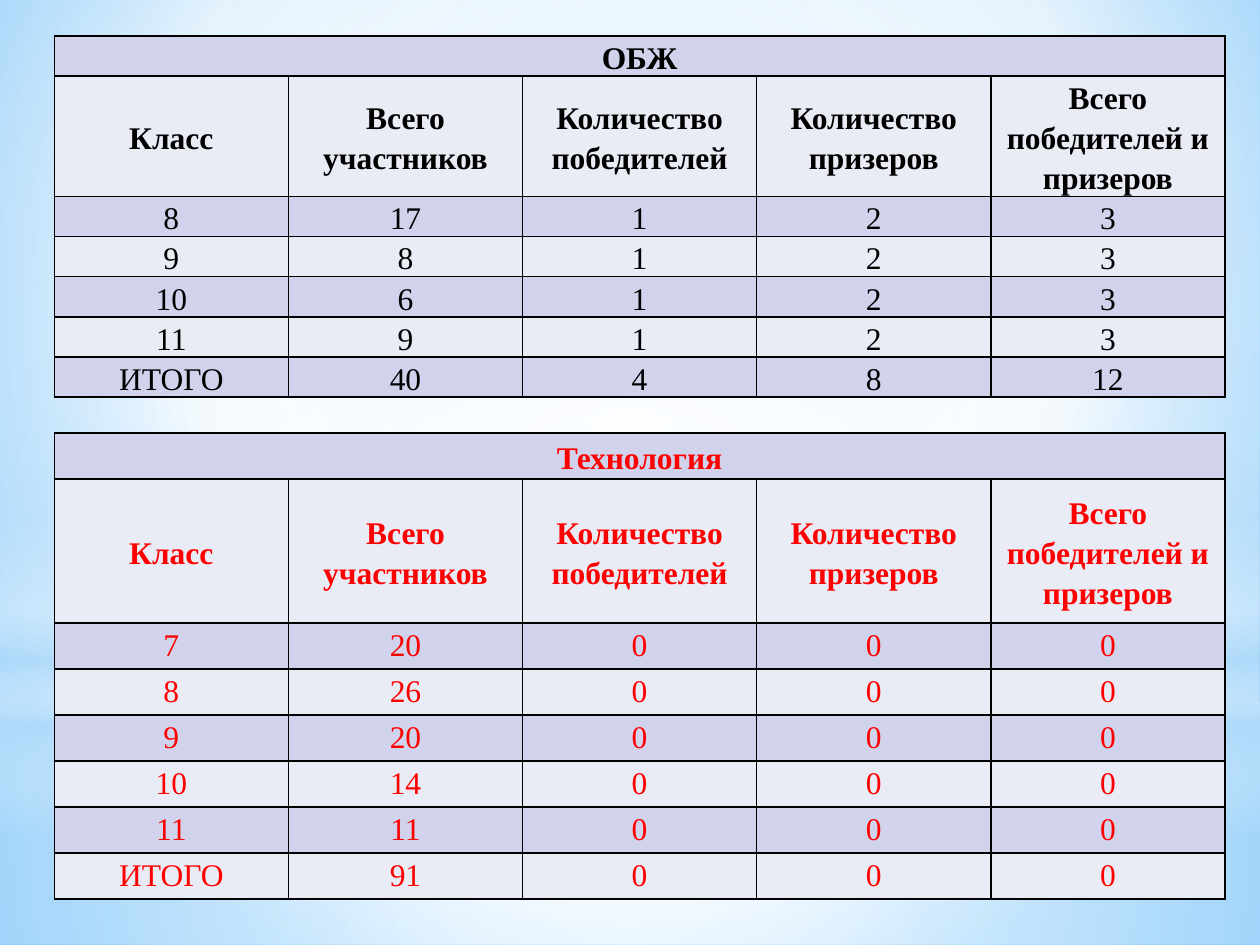
from lxml import etree
from pptx import Presentation
from pptx.dml.color import RGBColor
from pptx.enum import shapes, text
from pptx.oxml import ns
from pptx.util import Pt

BLACK = RGBColor(0x00, 0x00, 0x00)
RED = RGBColor(0xFF, 0x00, 0x00)
WHITE = RGBColor(0xFF, 0xFF, 0xFF)
HAZE = RGBColor(0xB4, 0xDC, 0xFA)
SKY = RGBColor(0x9E, 0xD5, 0xFF)
DEEP_SKY = RGBColor(0x5B, 0xB9, 0xFF)
BANDS = [RGBColor(0xD0, 0xD3, 0xEB), RGBColor(0xE9, 0xEB, 0xF5)]
CENTRE = (50, 50, 50, 50)


def add_gradient(holder, stops, focus):
    solid = holder.find(ns.qn("a:solidFill"))
    gradient = etree.Element(ns.qn("a:gradFill"), rotWithShape="1")
    stop_list = etree.SubElement(gradient, ns.qn("a:gsLst"))
    for position, color, opacity in stops:
        stop = etree.SubElement(stop_list, ns.qn("a:gs"), pos=str(position * 1000))
        tint = etree.SubElement(stop, ns.qn("a:srgbClr"), val=str(color))
        if opacity < 100:
            etree.SubElement(tint, ns.qn("a:alpha"), val=str(opacity * 1000))
    if focus:
        radial = etree.SubElement(gradient, ns.qn("a:path"), path="circle")
        edges = {side: str(share * 1000) for side, share in zip("ltrb", focus)}
        etree.SubElement(radial, ns.qn("a:fillToRect"), **edges)
    else:
        etree.SubElement(gradient, ns.qn("a:lin"), ang="5400000", scaled="0")
    holder.replace(solid, gradient)


def add_borders(cell):
    properties = cell._tc.get_or_add_tcPr()
    for index, side in enumerate(("lnL", "lnR", "lnT", "lnB")):
        border = etree.Element(ns.qn(f"a:{side}"), w=str(Pt(1)))
        paint = etree.SubElement(border, ns.qn("a:solidFill"))
        etree.SubElement(paint, ns.qn("a:srgbClr"), val=str(BLACK))
        properties.insert(index, border)


prs = Presentation()
prs.slide_width, prs.slide_height = Pt(720), Pt(540)
slide = prs.slides.add_slide(prs.slide_layouts[6])

slide.background.fill.solid()
add_gradient(slide.element.find(".//" + ns.qn("p:bgPr")),
             [(0, SKY, 100), (60, WHITE, 100), (100, DEEP_SKY, 100)], (20, 10, 20, 60))

RECTANGLE, OVAL = shapes.MSO_SHAPE.RECTANGLE, shapes.MSO_SHAPE.OVAL
glows = [
    (RECTANGLE, 401.8, 138.2, [(0, WHITE, 91), (37, WHITE, 76), (100, HAZE, 79)], CENTRE),
    (RECTANGLE, 0, 401.8, [(0, WHITE, 89), (48, WHITE, 62), (100, HAZE, 79)], CENTRE),
    (RECTANGLE, 296.6, 180, [(0, WHITE, 0), (29, WHITE, 30), (45, HAZE, 40),
                             (55, WHITE, 26), (65, HAZE, 60), (100, WHITE, 0)], None),
    (OVAL, 126, 401.8, [(0, WHITE, 100), (56, WHITE, 0)], CENTRE),
]
for outline, top, height, stops, focus in glows:
    glow = slide.shapes.add_shape(outline, 0, Pt(top), Pt(720), Pt(height))
    glow.shadow.inherit = False
    glow.line.fill.background()
    glow.fill.solid()
    add_gradient(glow.element.spPr, stops, focus)

HEADINGS = ["Класс", "Всего участников", "Количество победителей",
            "Количество призеров", "Всего победителей и призеров"]
subjects = [
    ("ОБЖ", BLACK, 20.6, 21.6, 68.4, [
        (8, 17, 1, 2, 3), (9, 8, 1, 2, 3), (10, 6, 1, 2, 3), (11, 9, 1, 2, 3),
        ("ИТОГО", 40, 4, 8, 12)]),
    ("Технология", RED, 247.4, 26.3, 82.3, [
        (7, 20, 0, 0, 0), (8, 26, 0, 0, 0), (9, 20, 0, 0, 0), (10, 14, 0, 0, 0),
        (11, 11, 0, 0, 0), ("ИТОГО", 91, 0, 0, 0)]),
]
for subject, color, top, row_height, heading_height, results in subjects:
    rows = [[subject, "", "", "", ""], HEADINGS, *results]
    table = slide.shapes.add_table(len(rows), len(HEADINGS), Pt(31), Pt(top), Pt(669),
                                   Pt(row_height * (len(rows) - 1) + heading_height)).table
    table.first_row = table.horz_banding = False
    for column in table.columns:
        column.width = Pt(133.8)
    table.cell(0, 0).merge(table.cell(0, len(HEADINGS) - 1))

    for r, values in enumerate(rows):
        table.rows[r].height = Pt(heading_height if r == 1 else row_height)
        is_heading = r < 2
        for c, value in enumerate(values):
            cell = table.cell(r, c)
            cell.fill.solid()
            cell.fill.fore_color.rgb = BANDS[r % 2]
            add_borders(cell)
            cell.margin_left = cell.margin_right = Pt(5 if is_heading else 5.75)
            cell.margin_top = cell.margin_bottom = 0
            if cell.is_spanned:
                continue
            cell.vertical_anchor = text.MSO_ANCHOR.MIDDLE if is_heading else text.MSO_ANCHOR.TOP
            paragraph = cell.text_frame.paragraphs[0]
            paragraph.alignment = text.PP_ALIGN.CENTER
            paragraph.line_spacing = 1.15
            paragraph.space_after = Pt(10 if is_heading else 0)
            run = paragraph.add_run()
            run.text = str(value)
            run.font.name = "Times New Roman"
            run.font.size = Pt(18)
            run.font.bold = is_heading
            run.font.color.rgb = color

prs.save("out.pptx")
